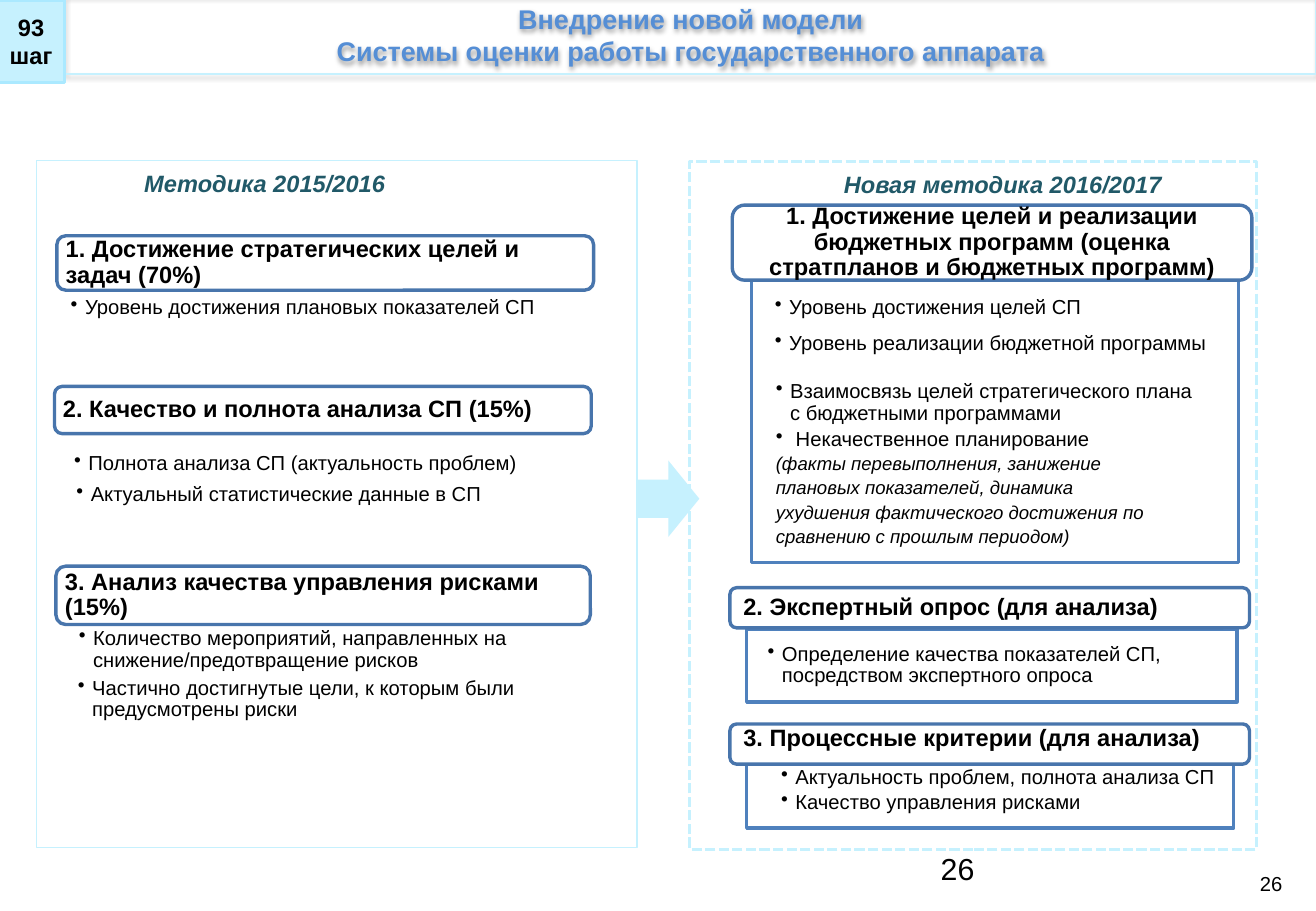
from dataclasses import dataclass

from lxml import etree
from pptx import Presentation
from pptx import util as u
from pptx.dml.color import RGBColor
from pptx.enum import dml, shapes, text
from pptx.oxml import ns

FONT = "Arial"
BLACK, WHITE = "000000", "FFFFFF"
PALE_BLUE, STEP_EDGE = "C6F1FE", "ABE9FF"
HEADING_BLUE, FRAME_BLUE = "4875AC", "4F81BD"
TITLE_BLUE, PANEL_TEAL = "558ED5", "215968"
LEFT, CENTER, RIGHT = text.PP_ALIGN.LEFT, text.PP_ALIGN.CENTER, text.PP_ALIGN.RIGHT
TOP, MIDDLE = text.MSO_ANCHOR.TOP, text.MSO_ANCHOR.MIDDLE
RECTANGLE = shapes.MSO_SHAPE.RECTANGLE
ROUNDED = shapes.MSO_SHAPE.ROUNDED_RECTANGLE


# All lengths are in centimetres, text sizes and line widths in points
@dataclass(frozen=True)
class Box:
    left: float
    top: float
    width: float
    height: float


@dataclass(frozen=True)
class Style:
    size: float
    color: str = BLACK
    bold: bool = False
    italic: bool = False
    align: text.PP_ALIGN = LEFT
    anchor: text.MSO_ANCHOR = TOP
    spacing: float = 1.0
    insets: tuple[float, float, float, float] = (0.25, 0.13, 0.25, 0.13)
    wrap: bool = True


@dataclass(frozen=True)
class Heading:
    box: Box
    caption: str
    align: text.PP_ALIGN = LEFT
    left_inset: float = 0.13
    bottom_inset: float = 0.13


@dataclass(frozen=True)
class BulletList:
    box: Box
    items: tuple[str, ...]
    remarks: tuple[str, ...] = ()


PANEL_TITLE = Style(14, PANEL_TEAL, bold=True, italic=True, align=CENTER)
BULLET = Style(12, spacing=0.9, insets=(0.41, 0.05, 0.23, 0.05))

FRAMES = [
    Box(15.72, 5.66, 10.19, 6.1),
    Box(15.62, 13.16, 10.26, 1.52),
    Box(15.62, 15.44, 10.19, 1.88),
]

HEADINGS = [
    Heading(Box(1.19, 4.93, 11.23, 1.14), "1. Достижение стратегических целей и задач (70%)"),
    Heading(Box(1.14, 8.08, 11.23, 0.99), "2. Качество и полнота анализа СП (15%)"),
    Heading(Box(1.17, 11.84, 11.18, 1.22), "3. Анализ качества управления рисками (15%)"),
    Heading(Box(15.32, 4.29, 10.87, 1.57),
            "1. Достижение целей и реализации бюджетных программ "
            "(оценка стратпланов и бюджетных программ)", align=CENTER),
    Heading(Box(15.27, 12.29, 10.87, 0.84), "2. Экспертный опрос (для анализа)", left_inset=0.24),
    Heading(Box(15.27, 15.14, 10.87, 0.84), "3. Процессные критерии (для анализа)",
            left_inset=0.24, bottom_inset=0.36),
]

BULLET_LISTS = [
    BulletList(Box(1.07, 6.17, 11.18, 0.99), ("Уровень достижения плановых показателей СП",)),
    BulletList(Box(1.14, 9.42, 11.18, 0.99), ("Полнота анализа СП (актуальность проблем)",)),
    BulletList(Box(1.19, 10.08, 10.36, 0.86), ("Актуальный статистические данные в СП",)),
    BulletList(Box(1.24, 13.08, 11.18, 0.99),
               ("Количество мероприятий, направленных на снижение/предотвращение рисков",)),
    BulletList(Box(1.22, 14.12, 11.18, 0.99),
               ("Частично достигнутые цели, к которым были предусмотрены риски",)),
    BulletList(Box(15.8, 6.17, 8.46, 0.86), ("Уровень достижения целей СП",)),
    BulletList(Box(15.8, 6.91, 9.78, 0.86), ("Уровень реализации бюджетной программы",)),
    BulletList(Box(15.82, 7.92, 9.42, 2.74),
               ("Взаимосвязь целей стратегического плана с бюджетными программами",
                " Некачественное планирование"),
               ("(факты перевыполнения, занижение", "плановых показателей, динамика",
                "ухудшения фактического достижения по", "сравнению с прошлым периодом)")),
    BulletList(Box(15.65, 13.41, 9.3, 1.17),
               ("Определение качества показателей СП, посредством экспертного опроса",)),
    BulletList(Box(15.93, 15.98, 9.88, 1.35),
               ("Актуальность проблем, полнота анализа СП", "Качество управления рисками")),
]


def rgb(color: str) -> RGBColor:
    return RGBColor.from_string(color)


def place(box: Box) -> tuple[u.Cm, ...]:
    return tuple(u.Cm(n) for n in (box.left, box.top, box.width, box.height))


def add_outline(slide, kind, box: Box, fill: str | None = None,
                line: str | None = None, width: float = 2):
    shape = slide.shapes.add_shape(kind, *place(box))
    shape.shadow.inherit = False
    if fill:
        shape.fill.solid()
        shape.fill.fore_color.rgb = rgb(fill)
    else:
        shape.fill.background()
    if line:
        shape.line.color.rgb = rgb(line)
        shape.line.width = u.Pt(width)
    else:
        shape.line.fill.background()
    return shape


def write(shape, lines: tuple[str, ...], style: Style) -> None:
    frame = shape.text_frame
    frame.word_wrap = style.wrap
    frame.vertical_anchor = style.anchor
    (frame.margin_left, frame.margin_top,
     frame.margin_right, frame.margin_bottom) = (u.Cm(n) for n in style.insets)
    for index, line in enumerate(lines):
        paragraph = frame.add_paragraph() if index else frame.paragraphs[0]
        paragraph.text = line
        paragraph.alignment = style.align
        paragraph.line_spacing = style.spacing
        font = paragraph.font
        font.name, font.size = FONT, u.Pt(style.size)
        font.bold, font.italic = style.bold, style.italic
        font.color.rgb = rgb(style.color)


def add_label(slide, box: Box, lines: tuple[str, ...], style: Style):
    label = slide.shapes.add_textbox(*place(box))
    write(label, lines, style)
    return label


def add_heading(slide, heading: Heading) -> None:
    shape = add_outline(slide, ROUNDED, heading.box, WHITE, HEADING_BLUE)
    insets = (heading.left_inset, 0.13, 0.13, heading.bottom_inset)
    write(shape, (heading.caption,), Style(14, bold=True, align=heading.align, anchor=MIDDLE,
                                           spacing=0.9, insets=insets))


def add_bullet_list(slide, bullets: BulletList) -> None:
    label = add_label(slide, bullets.box, bullets.items + bullets.remarks, BULLET)
    for index, paragraph in enumerate(label.text_frame.paragraphs):
        paragraph.space_after = u.Pt(2.4)
        properties = paragraph._p.get_or_add_pPr()
        properties.set("marL", str(u.Cm(0.3)))
        properties.set("indent", str(-u.Cm(0.3)))
        if index < len(bullets.items):
            etree.SubElement(properties, ns.qn("a:buChar"), char="•")
            properties.append(properties.find(ns.qn("a:defRPr")))
        else:
            paragraph.font.size, paragraph.font.italic = u.Pt(11), True


def add_shadow(shape) -> None:
    effects = shape._element.spPr.find(ns.qn("a:effectLst"))
    shadow = etree.SubElement(effects, ns.qn("a:outerShdw"), blurRad=str(u.Pt(3.1)),
                              dist=str(u.Pt(1.6)), dir="5400000", rotWithShape="0")
    color = etree.SubElement(shadow, ns.qn("a:srgbClr"), val=BLACK)
    etree.SubElement(color, ns.qn("a:alpha"), val="38000")


def main() -> None:
    presentation = Presentation()
    presentation.slide_width, presentation.slide_height = u.Cm(27.53), u.Cm(19.05)
    slide = presentation.slides.add_slide(presentation.slide_layouts[6])

    # Panels and the arrow between them
    new_panel = add_outline(slide, RECTANGLE, Box(14.43, 3.38, 11.86, 14.38), line=PALE_BLUE)
    new_panel.line.dash_style = dml.MSO_LINE.SQUARE_DOT
    add_outline(slide, RECTANGLE, Box(0.76, 3.35, 12.57, 14.38), line=PALE_BLUE, width=0.75)
    add_label(slide, Box(2.29, 3.4, 6.5, 0.86), ("Методика 2015/2016",), PANEL_TITLE)
    add_label(slide, Box(17.12, 3.43, 7.72, 0.86), ("Новая методика 2016/2017",), PANEL_TITLE)
    arrow = add_outline(slide, shapes.MSO_SHAPE.UP_ARROW, Box(13.18, 9.78, 1.6, 1.3), PALE_BLUE)
    arrow.rotation = 90

    # Criteria
    for frame in FRAMES:
        add_outline(slide, RECTANGLE, frame, line=FRAME_BLUE)
    for heading in HEADINGS:
        add_heading(slide, heading)
    for bullets in BULLET_LISTS:
        add_bullet_list(slide, bullets)

    # Title bar and step number
    title = add_outline(slide, RECTANGLE, Box(1.37, -0.08, 26.16, 1.63),
                        line=PALE_BLUE, width=0.75)
    add_shadow(title)
    write(title, ("Внедрение новой модели", "Системы оценки работы государственного аппарата"),
          Style(16, TITLE_BLUE, bold=True, align=CENTER))
    step = add_outline(slide, RECTANGLE, Box(-0.05, 0, 1.4, 1.73), PALE_BLUE, STEP_EDGE)
    write(step, ("93", "шаг"), Style(14, bold=True, align=CENTER, anchor=MIDDLE,
                                     insets=(0.1, 0.13, 0.1, 0.13)))

    # Page numbers
    add_label(slide, Box(19.43, 17.65, 6.2, 1.02), ("26",), Style(18))
    add_label(slide, Box(26.09, 18.08, 0.99, 0.76), ("26",), Style(12, align=RIGHT, wrap=False))

    presentation.save("out.pptx")


if __name__ == "__main__":
    main()
